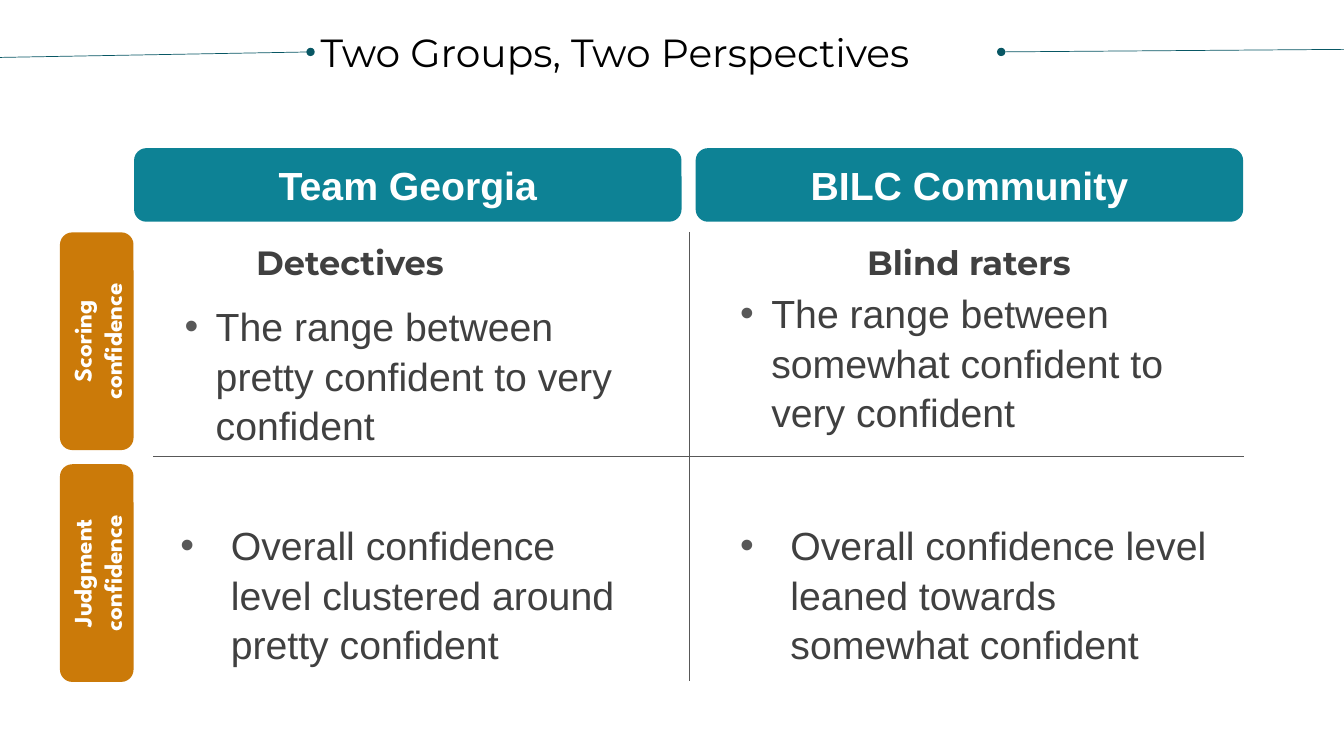
from pptx import Presentation
from pptx.dml.color import RGBColor
from pptx.enum.shapes import MSO_CONNECTOR as Connector, MSO_SHAPE as Shape
from pptx.enum.text import MSO_ANCHOR as Anchor, MSO_AUTO_SIZE as AutoSize, PP_ALIGN as Align
from pptx.oxml.ns import qn
from pptx.util import Inches, Pt
from lxml.etree import SubElement

BLACK = RGBColor(0x00, 0x00, 0x00)
WHITE = RGBColor(0xFF, 0xFF, 0xFF)
TEAL = RGBColor(0x0D, 0x82, 0x95)
DARK_TEAL = RGBColor(0x08, 0x57, 0x64)
ORANGE = RGBColor(0xCB, 0x7A, 0x09)
GRAY = RGBColor(0x58, 0x58, 0x58)
TEXT_GRAY = RGBColor(0x40, 0x40, 0x40)


class ComparisonPage:
    """Draws the elements of a two-column comparison on one slide."""

    def __init__(self, page):
        self.page = page
        self.shapes = page.shapes

    def place(self, box, left, top, width, height):
        box.left, box.top = Inches(left), Inches(top)
        box.width, box.height = Inches(width), Inches(height)

    def set_text(self, box, text, font, size, color, bold=False, align=Align.LEFT, inset=0.0):
        frame = box.text_frame
        frame.word_wrap = True
        frame.auto_size = AutoSize.NONE
        frame.margin_left = frame.margin_right = Inches(inset)
        frame.margin_top = frame.margin_bottom = Inches(inset / 2)
        para = frame.paragraphs[0]
        para.text = text
        para.alignment = align
        para.font.name = font
        para.font.size = Pt(size)
        para.font.bold = bold
        para.font.color.rgb = color
        return para

    def title(self, text):
        box = self.shapes.title
        self.place(box, 3.08, 0.23, 6.85, 0.57)
        self.set_text(box, text, "Montserrat", 28, BLACK, inset=0.1)
        return box

    def label(self, text, left, top, width, height, fill, font, size, rotation=0):
        box = self.shapes.add_shape(Shape.ROUNDED_RECTANGLE, 0, 0, 0, 0)
        self.place(box, left, top, width, height)
        box.rotation = rotation
        box.shadow.inherit = False
        box.fill.solid()
        box.fill.fore_color.rgb = fill
        box.line.fill.background()
        box.text_frame.vertical_anchor = Anchor.MIDDLE
        self.set_text(box, text, font, size, WHITE, True, Align.CENTER, 0.1)

    def heading(self, text, left, width, align):
        box = self.shapes.add_textbox(0, 0, 0, 0)
        self.place(box, left, 2.4, width, 0.4)
        self.set_text(box, text, "Montserrat", 24, TEXT_GRAY, True, align)

    def bullet(self, index, text, left, top, width, indent):
        box = self.page.placeholders[index]
        self.place(box, left, top, width, 1.41)
        box.text_frame.vertical_anchor = Anchor.TOP
        para = self.set_text(box, text, "Arial", 28, TEXT_GRAY)
        para.space_before = Pt(12)
        para.line_spacing = 1.05
        properties = para._p.get_or_add_pPr()
        properties.set("marL", str(Inches(indent)))
        properties.set("indent", str(-Inches(indent)))
        color = SubElement(properties, qn("a:buClr"))
        SubElement(color, qn("a:srgbClr"), val=str(GRAY))
        SubElement(properties, qn("a:buFont"), typeface="Arial")
        SubElement(properties, qn("a:buChar"), char="•")
        default_run = properties.find(qn("a:defRPr"))
        if default_run is not None:
            properties.append(default_run)

    def line(self, start, end, color, anchor=None, site=0):
        ends = [Inches(value) for value in (*start, *end)]
        line = self.shapes.add_connector(Connector.STRAIGHT, *ends)
        line.line.color.rgb = color
        line.line.width = Pt(0.5)
        if anchor is not None:
            line.begin_connect(anchor, site)
            SubElement(line.line._get_or_add_ln(), qn("a:headEnd"), type="oval")
        SubElement(line._element.spPr, qn("a:effectLst"))


def main():
    deck = Presentation()
    deck.slide_width, deck.slide_height = Inches(13.33), Inches(7.5)
    page = ComparisonPage(deck.slides.add_slide(deck.slide_layouts[4]))

    title = page.title("Two Groups, Two Perspectives")
    page.line((3.08, 0.52), (0, 0.57), DARK_TEAL, title, 1)
    page.line((9.93, 0.52), (13.33, 0.49), DARK_TEAL, title, 3)

    for left, text in ((1.33, "Team Georgia"), (6.9, "BILC Community")):
        page.label(text, left, 1.47, 5.43, 0.73, TEAL, "Arial", 28)
    for top, text in ((3.02, "Scoring confidence"), (5.32, "Judgment confidence")):
        page.label(text, -0.12, top, 2.16, 0.73, ORANGE, "League Spartan", 18, 270)

    page.line((1.52, 4.53), (12.34, 4.53), GRAY)
    page.line((6.84, 2.3), (6.84, 6.76), GRAY)

    page.heading("Detectives", 2.54, 3.8, Align.LEFT)
    page.heading("Blind raters", 7.37, 4.48, Align.CENTER)

    bullets = (
        ("The range between pretty confident to very confident", 1.83, 2.98, 4.51, 0.31),
        ("The range between somewhat confident to very confident", 7.34, 2.85, 4.55, 0.31),
        ("Overall confidence level clustered around pretty confident", 1.79, 5.15, 4.56, 0.5),
        ("Overall confidence level leaned towards somewhat confident", 7.34, 5.15, 4.63, 0.5),
    )
    for index, bullet in enumerate(bullets, start=1):
        page.bullet(index, *bullet)

    deck.save("out.pptx")


if __name__ == "__main__":
    main()
